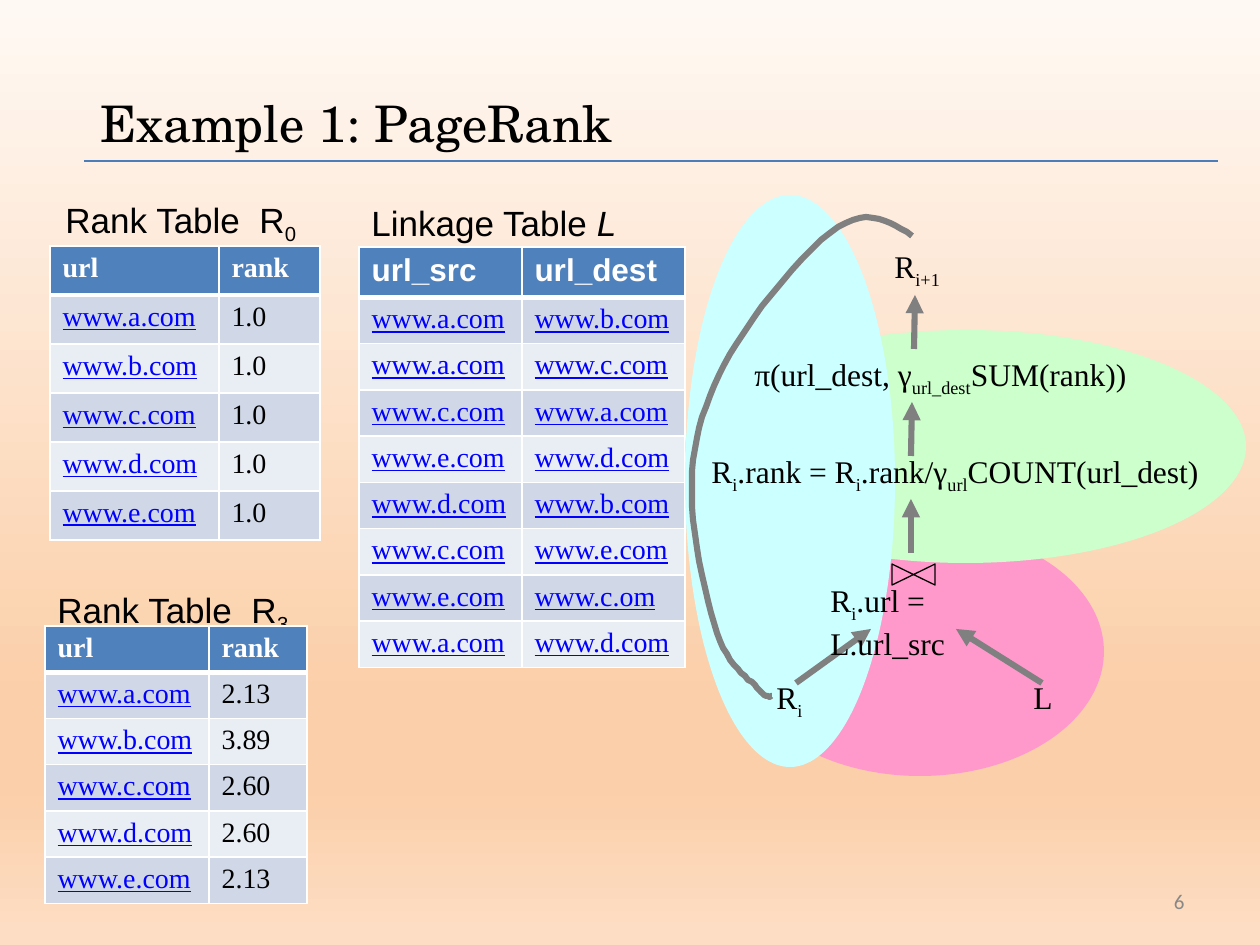
from lxml import etree
from pptx import Presentation
from pptx.dml.color import RGBColor
from pptx.enum.shapes import MSO_CONNECTOR, MSO_SHAPE
from pptx.enum.text import MSO_ANCHOR, PP_ALIGN
from pptx.oxml.ns import qn
from pptx.util import Pt

PX = 914400 / 126
LINE, OVAL, BOWTIE = MSO_CONNECTOR.STRAIGHT, MSO_SHAPE.OVAL, MSO_SHAPE.FLOWCHART_COLLATE
MIDDLE, RIGHT = MSO_ANCHOR.MIDDLE, PP_ALIGN.RIGHT
SANS, SERIF = "Arial", "Times New Roman"
C = {"black": "000000", "white": "FFFFFF", "link": "0000FF", "head": "4F81BD",
     "band0": "D0D8E8", "band1": "E9EDF4", "rule": "4A7DBA", "grey": "808080",
     "number": "888888", "pink": "FF99CC", "green": "CCFFCC", "cyan": "CCFFFF"}
BACKGROUND = [(0, "FFF9F4"), (74, "FBCFA9"), (83, "FBCFA9"), (100, "FDDEC5")]
CURVE = [(227, 41), (206, 27), (184, 12), (153, 32), (123, 52), (70, 116), (45, 159),
         (21, 202), (8, 241), (7, 288), (4, 333), (21, 402), (32, 438), (43, 472),
         (63, 482), (72, 493), (81, 503), (85, 502), (87, 501)]


def emu(*lengths):
    return [round(v * PX) for v in lengths]


def rgb(name):
    return RGBColor.from_string(C[name])


def add_run(p, text, size, font, color="black", style=""):
    r = p.add_run()
    r.text = text
    r.font.size, r.font.name = Pt(size), font
    r.font.color.rgb = rgb(color)
    if style == "bold":
        r.font.bold = True
    elif style == "italic":
        r.font.italic = True
    elif style == "link":
        r.font.underline = True
    elif style == "sub":
        r._r.get_or_add_rPr().set("baseline", "-25000")


def add_text(s, box, runs, size, font, color="black", anchor=None, align=None):
    """Each run is (text,) or (text, style)."""
    tf = s.shapes.add_textbox(*emu(*box)).text_frame
    tf.word_wrap = True
    if anchor is not None:
        tf.vertical_anchor = anchor
    p = tf.paragraphs[0]
    if align is not None:
        p.alignment = align
    for text, *style in runs:
        add_run(p, text, size, font, color, *style)


def add_line(s, ends, color, width, arrow=False):
    sp = s.shapes.add_connector(LINE, *emu(*ends))
    sp.line.color.rgb, sp.line.width = rgb(color), Pt(width)
    if arrow:
        etree.SubElement(sp.line._get_or_add_ln(), qn("a:tailEnd"), type="triangle")
    etree.SubElement(sp._element.spPr, qn("a:effectLst"))


def set_borders(cell, bottom, top):
    tcPr = cell._tc.get_or_add_tcPr()
    for i, (side, width) in enumerate([("L", 1), ("R", 1), ("T", top), ("B", bottom)]):
        ln = etree.Element(qn("a:ln" + side), w=str(Pt(width)))
        fill = etree.SubElement(ln, qn("a:solidFill"))
        etree.SubElement(fill, qn("a:srgbClr"), val=C["white"])
        tcPr.insert(i, ln)


def add_grid(s, x, y, cols, head_height, row_height, rows, head_font=SERIF, head_size=16):
    """Table whose first row is the heading; web addresses look like links."""
    heights = [head_height] + [row_height] * (len(rows) - 1)
    box = emu(x, y, sum(cols), sum(heights))
    table = s.shapes.add_table(len(rows), len(cols), *box).table
    for col, width in zip(table.columns, emu(*cols)):
        col.width = width
    for i, (row, height) in enumerate(zip(rows, emu(*heights))):
        table.rows[i].height = height
        for j, text in enumerate(row):
            cell = table.cell(i, j)
            cell.fill.solid()
            cell.fill.fore_color.rgb = rgb("head" if i == 0 else f"band{(i - 1) % 2}")
            set_borders(cell, bottom=3 if i == 0 else 1, top=3 if i == 1 else 1)
            p = cell.text_frame.paragraphs[0]
            if i == 0:
                add_run(p, text, head_size, head_font, "white", "bold")
            elif text.startswith("www"):
                add_run(p, text, 16, SERIF, "link", "link")
            else:
                add_run(p, text, 16, SERIF)


def add_rank_table(s, x, y, cols, head_height, row_height, ranks, label, index):
    add_text(s, label, [("Rank Table  R",), (index, "sub")], 20, SANS)
    rows = [("url", "rank")] + [(f"www.{c}.com", rank) for c, rank in zip("abcde", ranks)]
    add_grid(s, x, y, cols, head_height, row_height, rows)


def add_linkage_table(s, x, y):
    add_text(s, (x, y - 52, 326, 54), [("Linkage Table ",), ("L", "italic")], 20, SANS)
    names = ["a.com b.com", "a.com c.com", "c.com a.com", "e.com d.com",
             "d.com b.com", "c.com e.com", "e.com c.om", "a.com d.com"]
    links = [tuple("www." + name for name in pair.split()) for pair in names]
    add_grid(s, x, y, (163, 163), 47, 44, [("url_src", "url_dest")] + links, SANS, 18)


def add_curve(s, x, y, points, steps=12):
    """Open line through cubic Bezier pieces that share their end points."""
    line = []
    for k in range(0, len(points) - 1, 3):
        for n in range(1, steps + 1):
            t = n / steps
            weights = ((1 - t) ** 3, 3 * t * (1 - t) ** 2, 3 * t * t * (1 - t), t ** 3)
            line.append(tuple(origin + sum(w * pt[axis] for w, pt in zip(weights, points[k:k + 4]))
                              for axis, origin in enumerate((x, y))))
    builder = s.shapes.build_freeform(x + points[0][0], y + points[0][1], scale=PX)
    builder.add_line_segments(line, close=False)
    sp = builder.convert_to_shape()
    sp.shadow.inherit = False
    sp.fill.background()
    sp.line.color.rgb, sp.line.width = rgb("grey"), Pt(3.5)


def add_query_plan(s, x, y):
    # Coloured regions
    for color, (dx, dy, w, h) in [("pink", (51, 332, 368, 249)), ("green", (0, 135, 561, 233)),
                                  ("cyan", (0, 0, 210, 572))]:
        sp = s.shapes.add_shape(OVAL, *emu(x + dx, y + dy, w, h))
        sp.shadow.inherit = False
        sp.fill.solid()
        sp.fill.fore_color.rgb = rgb(color)
        sp.line.fill.background()

    # Join symbol
    sp = s.shapes.add_shape(BOWTIE, *emu(x + 218, y + 358, 21, 43))
    sp.rotation = 270
    sp.shadow.inherit = False
    sp.fill.background()
    sp.line.color.rgb, sp.line.width = rgb("black"), Pt(0.75)

    # Arrows up the plan
    for x1, y1, x2, y2 in [(357, 488, 271, 434), (111, 488, 186, 434), (226, 358, 226, 304),
                           (226, 261, 227, 207), (229, 154, 230, 100)]:
        add_line(s, (x + x1, y + y1, x + x2, y + y2), "grey", 3.5, arrow=True)

    # Operators and relations
    i = ("i", "sub")
    for (dx, dy, w, h), runs in [
        ((79, 477, 64, 64), [("R",), i]),
        ((336, 477, 43, 64), [("L",)]),
        ((14, 251, 547, 52), [("R",), i, (".rank = R",), i, (".rank/γ",), ("url", "sub"),
                              ("COUNT(url_dest)",)]),
        ((133, 380, 190, 52), [("R",), i, (".url = L.url_src",)]),
        ((57, 154, 431, 52), [("π(url_dest, γ",), ("url_dest", "sub"), ("SUM(rank))",)]),
        ((197, 46, 118, 64), [("R",), ("i+1", "sub")]),
    ]:
        add_text(s, (x + dx, y + dy, w, h), runs, 18, SERIF)

    # Feedback from the result to the input
    add_curve(s, x, y, CURVE)


def add_frame(s):
    """Background, title with its rule, and slide number."""
    fill = s.background.fill
    fill.gradient()
    fill.gradient_angle = 270
    stops = fill._fill._gradFill.find(qn("a:gsLst"))
    for gs in list(stops):
        stops.remove(gs)
    for pos, color in BACKGROUND:
        gs = etree.SubElement(stops, qn("a:gs"), pos=str(pos * 1000))
        etree.SubElement(gs, qn("a:srgbClr"), val=color)
    add_text(s, (88, 83, 1166, 78), [("Example 1: PageRank",)], 28.8, "TeX Gyre Schola",
             anchor=MIDDLE)
    add_line(s, (84, 161, 1218, 161), "rule", 0.75)
    add_text(s, (903, 876, 294, 50), [("6",)], 12, "Calibri", "number", MIDDLE, RIGHT)


def main():
    prs = Presentation()
    prs.slide_width, prs.slide_height = emu(1260, 945)
    s = prs.slides.add_slide(prs.slide_layouts[6])
    add_frame(s)
    add_rank_table(s, 50, 246, (169, 101), 49, 49, ["1.0"] * 5, (53, 192, 326, 54), "0")
    add_linkage_table(s, 359, 247)
    add_rank_table(s, 45, 626, (164, 98), 44, 44, ["2.13", "3.89", "2.60", "2.60", "2.13"],
                   (45, 582, 262, 54), "3")
    add_query_plan(s, 685, 195)
    prs.save("out.pptx")


if __name__ == "__main__":
    main()
